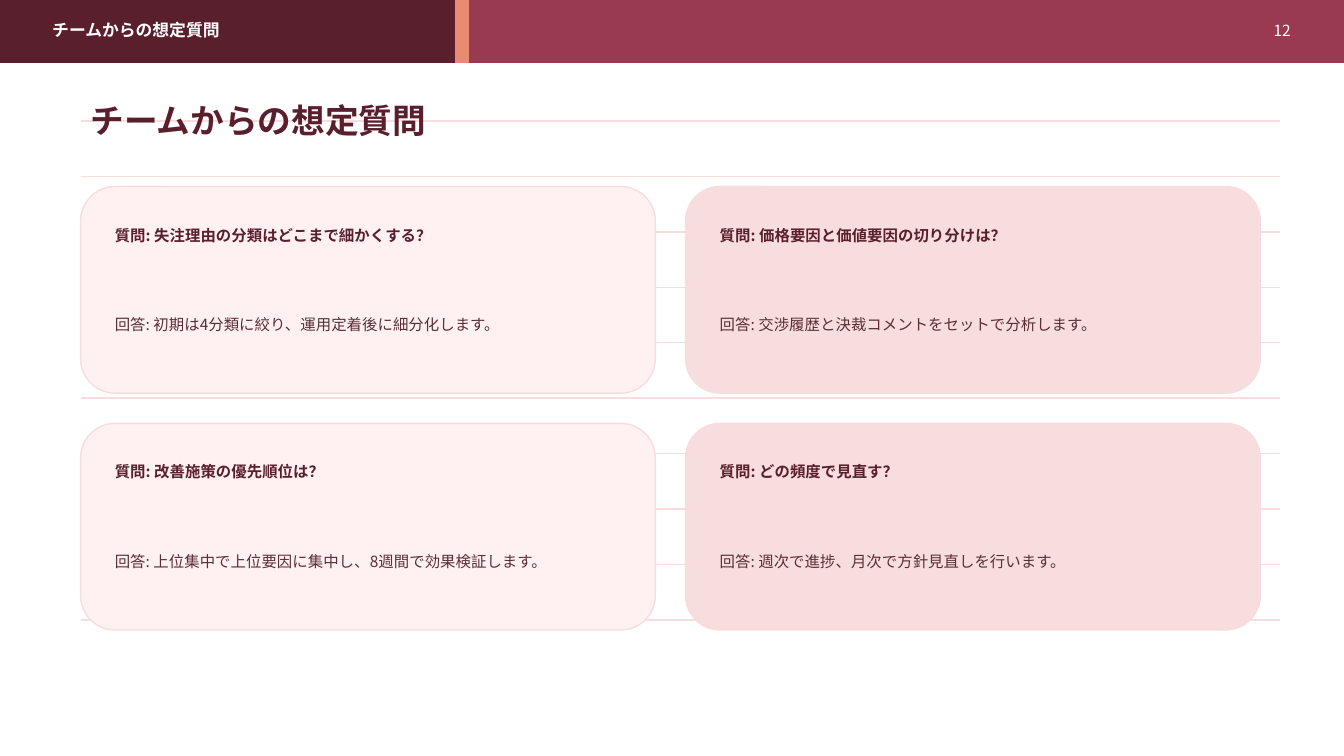
from dataclasses import dataclass

from lxml import etree
from pptx import Presentation
from pptx.dml.color import RGBColor
from pptx.enum import shapes, text
from pptx.oxml import ns
from pptx.util import Inches, Pt


@dataclass(frozen=True)
class Theme:
    wine: str = "5A1F2D"
    rose: str = "9A3A51"
    coral: str = "E98A73"
    blush: str = "F7DDDE"
    pale: str = "FFF1F1"
    ink: str = "5A2E37"
    white: str = "FFFFFF"
    head: str = "League Spartan"
    body: str = "Noto Sans CJK JP"
    title: int = 24
    band: int = 12
    small: int = 11


theme = Theme()
prs = Presentation()
prs.slide_width, prs.slide_height = Inches(13.33), Inches(7.5)
slide = prs.slides.add_slide(prs.slide_layouts[5])


def add_block(kind, box, fill, line):
    block = slide.shapes.add_shape(kind, *map(Inches, box))
    block.shadow.inherit = False
    block.fill.solid()
    block.fill.fore_color.rgb = RGBColor.from_string(fill)
    block.line.color.rgb = RGBColor.from_string(line)
    block.line.width = Pt(1)


def add_text(words, box, size, color, bold=False, face=theme.body,
             align=text.PP_ALIGN.LEFT, shape=None):
    shape = shape or slide.shapes.add_textbox(0, 0, 0, 0)
    shape.left, shape.top, shape.width, shape.height = map(Inches, box)
    frame = shape.text_frame
    frame.text = words
    frame.word_wrap = True
    frame.auto_size = text.MSO_AUTO_SIZE.NONE
    frame.vertical_anchor = text.MSO_ANCHOR.MIDDLE
    par = frame.paragraphs[0]
    par.alignment = align
    font = par.runs[0].font
    font.size, font.bold, font.name = Pt(size), bold, face
    font.color.rgb = RGBColor.from_string(color)
    # Japanese glyphs take the East Asian face
    props = par.runs[0].font._element
    east = etree.SubElement(props, ns.qn("a:ea"))
    east.set("typeface", face)


# Ruled background
for row in range(10):
    y = Inches(1.2 + 0.55 * row)
    rule = slide.shapes.add_connector(
        shapes.MSO_CONNECTOR.STRAIGHT, Inches(0.8), y, Inches(12.7), y)
    rule.line.color.rgb = RGBColor.from_string(theme.blush)
    rule.line.width = Pt(1)
    etree.SubElement(rule.element.spPr, ns.qn("a:effectLst"))

# Header band
for left, width, color in [(0, 13.33, theme.rose), (0, 4.6, theme.wine),
                           (4.52, 0.12, theme.coral)]:
    add_block(shapes.MSO_SHAPE.RECTANGLE, (left, 0, width, 0.62), color, color)
topic = "チームからの想定質問"
add_text(topic, (0.42, 0.17, 8.8, 0.26), theme.band, theme.white, True)
add_text("12", (12.15, 0.17, 0.75, 0.26), theme.small, theme.white,
         align=text.PP_ALIGN.RIGHT)

# Title, raised above the rules
title = slide.shapes.title
title.element.getparent().append(title.element)
add_text(topic, (0.8, 0.95, 11.4, 0.48), theme.title, theme.wine, True,
         theme.head, shape=title)

# Question cards, two by two
cards = [
    ("失注理由の分類はどこまで細かくする？",
     "初期は4分類に絞り、運用定着後に細分化します。"),
    ("価格要因と価値要因の切り分けは？",
     "交渉履歴と決裁コメントをセットで分析します。"),
    ("改善施策の優先順位は？",
     "上位集中で上位要因に集中し、8週間で効果検証します。"),
    ("どの頻度で見直す？",
     "週次で進捗、月次で方針見直しを行います。"),
]
for i, (ask, reply) in enumerate(cards):
    row, col = divmod(i, 2)
    x, y = 0.8 + 6 * col, 1.85 + 2.35 * row
    add_block(shapes.MSO_SHAPE.ROUNDED_RECTANGLE, (x, y, 5.7, 2.05),
              (theme.pale, theme.blush)[col], theme.blush)
    add_text(f"質問: {ask}", (x + 0.24, y + 0.24, 5.2, 0.48),
             theme.small, theme.wine, True)
    add_text(f"回答: {reply}", (x + 0.24, y + 0.82, 5.2, 1.1),
             theme.small, theme.ink)

prs.save("out.pptx")
